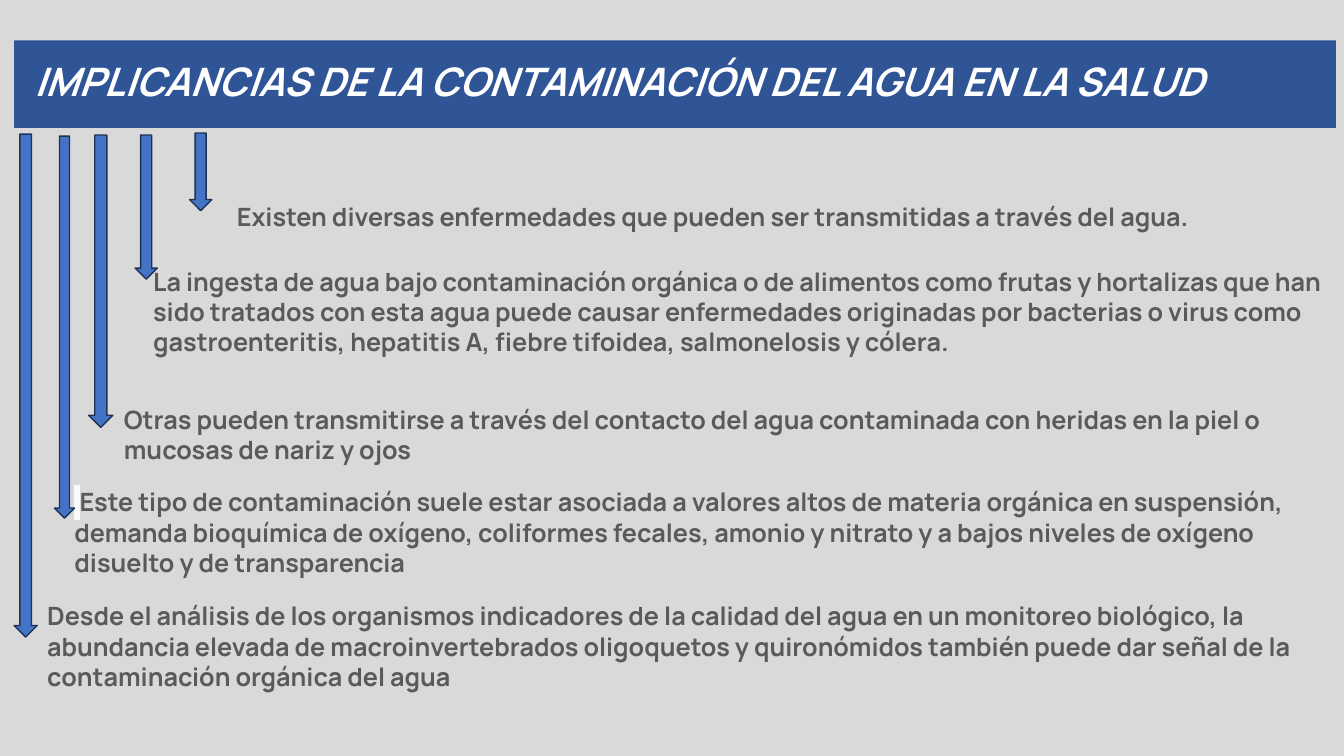
"""Build a slide on how water contamination affects health."""
from lxml import etree
from pptx import Presentation
from pptx import util as u
from pptx.dml.color import RGBColor
from pptx.enum import shapes, text
from pptx.oxml.ns import qn

PX = 9144
FONT = "Manrope"
COLORS = {
    "background": "D9D9D9",
    "banner": "2F5597",
    "title": "FFFFFF",
    "body": "5A5A5A",
    "arrow": "4472C4",
    "outline": "1E3256",
    "highlight": "FAFAFA",
}
SLIDE_SIZE = (1333, 750)
TITLE = "IMPLICANCIAS DE LA CONTAMINACIÓN DEL AGUA EN LA SALUD"
TITLE_AREA = (14, 40, 1311, 87)
TITLE_INSET = 20

POINTS = [
    {
        "text": "Existen diversas enfermedades que pueden ser transmitidas a través del agua.",
        "area": (225, 195, 1072, 40),
        "arrow": (188, 132, 22, 77),
    },
    {
        "text": "La ingesta de agua bajo contaminación orgánica o de alimentos como frutas y "
                "hortalizas que han sido tratados con esta agua puede causar enfermedades "
                "originadas por bacterias o virus como gastroenteritis, hepatitis A, fiebre "
                "tifoidea, salmonelosis y cólera.",
        "area": (142, 259, 1191, 101),
        "arrow": (134, 134, 22, 143),
    },
    {
        "text": "Otras pueden transmitirse a través del contacto del agua contaminada con "
                "heridas en la piel o mucosas de nariz y ojos",
        "area": (113, 396, 1248, 71),
        "arrow": (88, 134, 24, 290),
    },
    {
        "marker": " ",
        "text": "Este tipo de contaminación suele estar asociada a valores altos de materia "
                "orgánica en suspensión, demanda bioquímica de oxígeno, coliformes fecales, "
                "amonio y nitrato y a bajos niveles de oxígeno disuelto y de transparencia",
        "area": (64, 478, 1289, 101),
        "arrow": (54, 135, 20, 379),
    },
    {
        "text": "Desde el análisis de los organismos indicadores de la calidad del agua en un "
                "monitoreo biológico, la abundancia elevada de macroinvertebrados oligoquetos "
                "y quironómidos también puede dar señal de la contaminación orgánica del agua",
        "area": (37, 591, 1323, 101),
        "arrow": (14, 133, 23, 499),
    },
]


def scaled(lengths):
    return [length * PX for length in lengths]


def paint(fill, color):
    fill.solid()
    fill.fore_color.rgb = RGBColor.from_string(COLORS[color])


def add_span(para, words, size, color, bold=True, italic=False):
    span = para.add_run()
    span.text = words
    span.font.name = FONT
    span.font.size = u.Pt(size)
    span.font.bold = bold
    span.font.italic = italic
    paint(span.font.fill, color)
    return span


def highlight(span):
    fill = span.font._element.find(qn("a:solidFill"))
    mark = etree.Element(qn("a:highlight"))
    etree.SubElement(mark, qn("a:srgbClr"), val=COLORS["highlight"])
    fill.addnext(mark)


def add_title(page):
    banner = page.shapes.title
    banner.left, banner.top, banner.width, banner.height = scaled(TITLE_AREA)
    paint(banner.fill, "banner")
    frame = banner.text_frame
    frame.auto_size = text.MSO_AUTO_SIZE.NONE
    frame.word_wrap = True
    frame.vertical_anchor = text.MSO_ANCHOR.MIDDLE
    frame.margin_left = TITLE_INSET * PX
    para = frame.paragraphs[0]
    para.alignment = text.PP_ALIGN.LEFT
    para.line_spacing = 0.9
    add_span(para, TITLE, 28, "title", italic=True)


def add_point(page, point):
    box = page.shapes.add_textbox(*scaled(point["area"]))
    frame = box.text_frame
    frame.word_wrap = True
    frame.auto_size = text.MSO_AUTO_SIZE.SHAPE_TO_FIT_TEXT
    para = frame.paragraphs[0]
    if "marker" in point:
        highlight(add_span(para, point["marker"], 18, "body", bold=False))
    add_span(para, point["text"], 18, "body")

    arrow = page.shapes.add_shape(shapes.MSO_SHAPE.DOWN_ARROW, *scaled(point["arrow"]))
    arrow.shadow.inherit = False
    paint(arrow.fill, "arrow")
    paint(arrow.line.fill, "outline")
    arrow.line.width = u.Pt(1)


def main():
    deck = Presentation()
    deck.slide_width, deck.slide_height = scaled(SLIDE_SIZE)
    page = deck.slides.add_slide(deck.slide_layouts[5])
    paint(page.background.fill, "background")
    add_title(page)
    for point in POINTS:
        add_point(page, point)
    deck.save("out.pptx")


if __name__ == "__main__":
    main()
